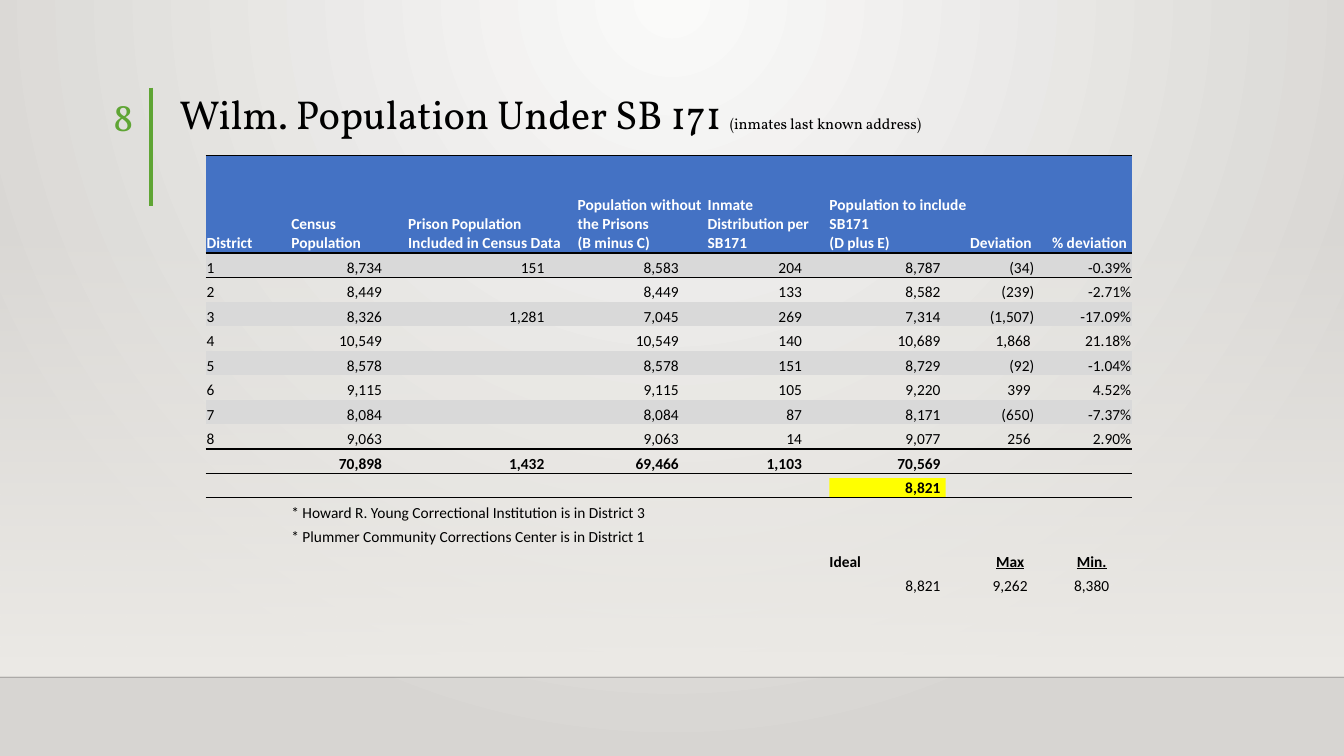
import pptx
import pptx.util
import pptx.dml.color
import pptx.enum.shapes
import pptx.enum.text
import pptx.oxml.ns
from lxml import etree

Pt = pptx.util.Pt
qn = pptx.oxml.ns.qn
ALIGN = pptx.enum.text.PP_ALIGN
ANCHOR = pptx.enum.text.MSO_ANCHOR
COLORS = {
    "ink": "000000", "white": "FFFFFF", "green": "5FA534", "header": "4472C4",
    "band": "D9D9D9", "mark": "FFFF00", "glow": "FAFAF9", "edge": "D7D5D2",
    "wall": "EDEBE7", "floor": "000001",
}

HEADER = ("District", "Census Population", "Prison Population Included in Census Data",
          "Population without the Prisons \v(B minus C)", "Inmate Distribution per SB171",
          "Population to include SB171 \v(D plus E)", "Deviation", "% deviation")
DISTRICTS = [
    ("1", "8,734", "151", "8,583", "204", "8,787", "(34)", "-0.39%"),
    ("2", "8,449", "", "8,449", "133", "8,582", "(239)", "-2.71%"),
    ("3", "8,326", "1,281", "7,045", "269", "7,314", "(1,507)", "-17.09%"),
    ("4", "10,549", "", "10,549", "140", "10,689", "1,868", "21.18%"),
    ("5", "8,578", "", "8,578", "151", "8,729", "(92)", "-1.04%"),
    ("6", "9,115", "", "9,115", "105", "9,220", "399", "4.52%"),
    ("7", "8,084", "", "8,084", "87", "8,171", "(650)", "-7.37%"),
    ("8", "9,063", "", "9,063", "14", "9,077", "256", "2.90%"),
]
SUMMARY = [
    ("", "70,898", "1,432", "69,466", "1,103", "70,569", "", ""),
    ("", "", "", "", "", "8,821", "", ""),
    ("", "* Howard R. Young Correctional Institution is in District 3", "", "", "", "", "", ""),
    ("", "* Plummer Community Corrections Center is in District 1", "", "", "", "", "", ""),
    ("", "", "", "", "", "Ideal", "Max", "Min."),
    ("", "", "", "", "", "8,821", "9,262", "8,380"),
]
ROWS = [HEADER] + DISTRICTS + SUMMARY
TOTAL, AVERAGE, NOTES, LIMITS, LIMIT_VALUES = 9, 10, (11, 12), 13, 14
COL_WIDTHS = (60.5, 83.5, 121, 93, 87, 100.5, 58.5, 58)
RIGHT_INSETS = (0.7, 18, 23, 20, 19, 20.5, 12, 0.7)
RULES = {0: 1, 1: 1, TOTAL: 2, TOTAL + 1: 1}  # line above each row, in points


def rgb(name):
    return pptx.dml.color.RGBColor.from_string(COLORS[name])


def set_alpha(element, percent):
    color = next(element.iter(qn("a:srgbClr")))
    etree.SubElement(color, qn("a:alpha"), val=str(percent * 1000))


def add_text(p, text, size=11, font="Calibri", color="ink", bold=False,
             underline=False, align=ALIGN.LEFT):
    p.alignment = align
    if not text:
        etree.SubElement(p._p, qn("a:endParaRPr"), sz=str(size * 100))
        return
    for i, line in enumerate(text.split("\v")):
        if i:
            p.add_line_break()
        r = p.add_run()
        r.text = line
        r.font.size, r.font.name = Pt(size), font
        r.font.bold, r.font.underline = bold, underline
        r.font.color.rgb = rgb(color)


class Slide:
    def __init__(self, prs, font):
        self.s = prs.slides.add_slide(prs.slide_layouts[6])
        self.font = font

    def gradient(self, fill, *names):
        fill.gradient()
        for stop, name in zip(fill.gradient_stops, names):
            stop.color.rgb = rgb(name)

    def background(self, inner, outer):
        self.gradient(self.s.background.fill, inner, outer)
        grad = next(self.s._element.iter(qn("a:gradFill")))
        grad.remove(grad.find(qn("a:lin")))
        shade = etree.SubElement(grad, qn("a:path"), {"path": "circle"})
        etree.SubElement(shade, qn("a:fillToRect"), l="43000", t="0", r="43000", b="100000")

    def rect(self, x, y, w, h, color, fade=False):
        sp = self.s.shapes.add_shape(pptx.enum.shapes.MSO_SHAPE.RECTANGLE,
                                     Pt(x), Pt(y), Pt(w), Pt(h))
        sp.shadow.inherit = False
        sp.line.fill.background()
        if fade:
            self.gradient(sp.fill, color, color)
            sp.fill.gradient_angle = 270
            set_alpha(sp._element.spPr, 0)
        else:
            sp.fill.solid()
            sp.fill.fore_color.rgb = rgb(color)

    def line(self, x1, y1, x2, y2, color, width, alpha=100):
        c = self.s.shapes.add_connector(pptx.enum.shapes.MSO_CONNECTOR.STRAIGHT,
                                        Pt(x1), Pt(y1), Pt(x2), Pt(y2))
        c.line.width = Pt(width)
        c.line.color.rgb = rgb(color)
        if alpha < 100:
            set_alpha(c._element.spPr, alpha)
        etree.SubElement(c._element.spPr, qn("a:effectLst"))

    def text(self, x, y, w, h, runs, anchor=ANCHOR.TOP, spacing=1.0, **style):
        tf = self.s.shapes.add_textbox(Pt(x), Pt(y), Pt(w), Pt(h)).text_frame
        tf.word_wrap = True
        tf.vertical_anchor = anchor
        p = tf.paragraphs[0]
        p.line_spacing = spacing
        for text, size in runs:
            add_text(p, text, size=size, font=self.font, **style)

    def border(self, cell, tag, width):
        ln = etree.Element(qn(tag), w=str(Pt(width)))
        fill = etree.SubElement(ln, qn("a:solidFill"))
        etree.SubElement(fill, qn("a:srgbClr"), val=COLORS["ink"])
        return ln

    def cell(self, cell, row, col, text):
        cell.vertical_anchor = ANCHOR.BOTTOM
        cell.margin_left = cell.margin_top = cell.margin_right = Pt(0.7)
        cell.margin_bottom = 0
        # Alignment: figures to the right, limits centred, the rest to the left
        align = ALIGN.LEFT
        if row >= LIMITS and col > 5:
            align = ALIGN.CENTER
        elif row and col and row not in (*NOTES, LIMITS):
            align = ALIGN.RIGHT
            positive = col == 6 and not text.endswith(")")
            cell.margin_right = Pt(RIGHT_INSETS[col] + (2.5 if positive else 0))
        add_text(cell.text_frame.paragraphs[0], text, align=align,
                 color="ink" if row else "white",
                 bold=row in (0, TOTAL, AVERAGE, LIMITS),
                 underline=row == LIMITS and col > 5)
        # Fill and rules
        if row == 0 or (row < TOTAL and row % 2):
            cell.fill.solid()
            cell.fill.fore_color.rgb = rgb("band" if row else "header")
        else:
            cell.fill.background()
        edges = [("a:lnT", RULES.get(row)), ("a:lnB", RULES.get(row + 1))]
        lines = [self.border(cell, tag, width) for tag, width in edges if width]
        for i, ln in enumerate(lines):
            cell._tc.get_or_add_tcPr().insert(i, ln)

    def table(self, x, y, rows, widths, header_height, row_height):
        height = header_height + row_height * (len(rows) - 1)
        frame = self.s.shapes.add_table(len(rows), len(widths), Pt(x), Pt(y),
                                        Pt(sum(widths)), Pt(height))
        t = frame.table
        t.first_row = t.horz_banding = False
        style = next(t._tbl.iter(qn("a:tableStyleId")))
        style.text = "{2D5ABB26-0587-4C30-8999-92F81FD0307C}"
        for col, width in zip(t.columns, widths):
            col.width = Pt(width)
        for i, values in enumerate(rows):
            t.rows[i].height = Pt(row_height if i else header_height)
            for j, value in enumerate(values):
                self.cell(t.cell(i, j), i, j, value)
        for i in NOTES:
            t.cell(i, 1).merge(t.cell(i, 4))


def main():
    prs = pptx.Presentation()
    prs.slide_width, prs.slide_height = Pt(960), Pt(540)
    slide = Slide(prs, "Vollkorn")

    # Backdrop
    slide.background("glow", "edge")
    slide.rect(0, 158.4, 960, 325, "wall", fade=True)
    slide.line(0, 483.8, 960, 483.8, "floor", 1, alpha=20)

    # Title and page number
    slide.line(108, 62.6, 108, 147, "green", 3)
    slide.text(121, 63.4, 749.5, 38.9,
               [("Wilm. Population Under SB 171 ", 28.8), ("(inmates last known address)", 10.8)],
               anchor=ANCHOR.BOTTOM, spacing=0.9)
    slide.text(38.2, 62.6, 64, 39.6, [("8", 28)], color="green", align=ALIGN.RIGHT)

    # Population table, with the average marked behind it
    slide.rect(592.5, 341.5, 83, 13.5, "mark")
    slide.table(146.9, 110.9, ROWS, COL_WIDTHS, 69.8, 17.49)

    prs.save("out.pptx")


if __name__ == "__main__":
    main()
